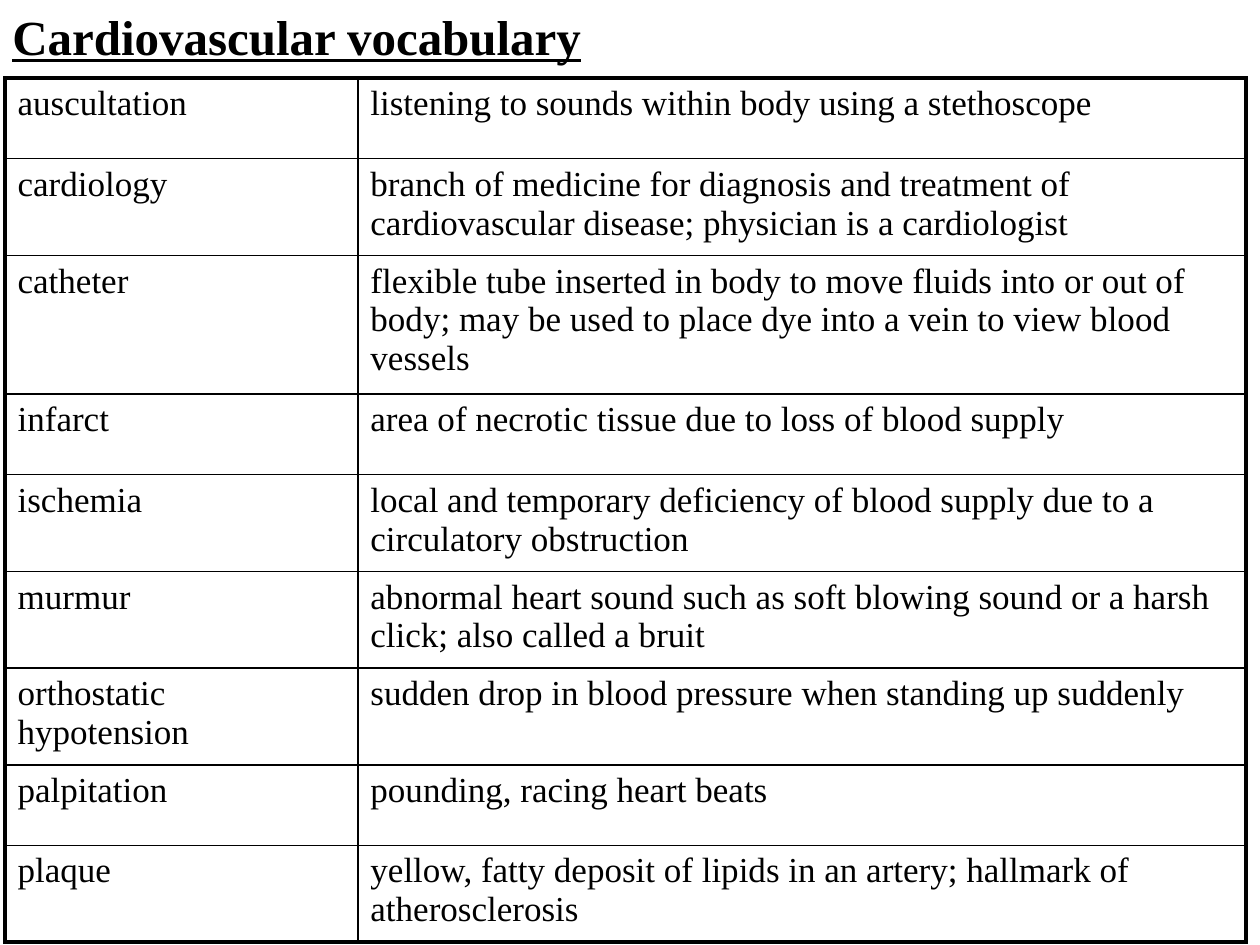
from lxml.etree import SubElement
from pptx import Presentation
from pptx.dml.color import RGBColor
from pptx.oxml.ns import qn
from pptx.util import Inches, Pt

TITLE = "Cardiovascular vocabulary"
TERMS = [
    ("auscultation", "listening to sounds within body using a stethoscope"),
    ("cardiology", "branch of medicine for diagnosis and treatment of "
     "cardiovascular disease; physician is a cardiologist"),
    ("catheter", "flexible tube inserted in body to move fluids into or out of "
     "body; may be used to place dye into a vein to view blood vessels"),
    ("infarct", "area of necrotic tissue due to loss of blood supply"),
    ("ischemia", "local and temporary deficiency of blood supply due to a "
     "circulatory obstruction"),
    ("murmur", "abnormal heart sound such as soft blowing sound or a harsh "
     "click; also called a bruit"),
    ("orthostatic hypotension",
     "sudden drop in blood pressure when standing up suddenly"),
    ("palpitation", "pounding, racing heart beats"),
    ("plaque", "yellow, fatty deposit of lipids in an artery; hallmark of "
     "atherosclerosis"),
]
INK = "000000"
FACE = "Times New Roman"
HEAD = {"name": FACE, "size": Pt(28), "bold": True, "underline": True}
BODY = {"name": FACE, "size": Pt(20), "bold": False}
WIDE, HIGH = 10, 7.5
LEFT, TOP = 0.04, 0.62
COLS = [2.8, 7.05]
ROW = 0.64
THICK, THIN = 2.25, 1


def color(code):
    return RGBColor.from_string(code)


def write(frame, text, look):
    para = frame.paragraphs[0]
    run = para.add_run()
    run.text = text
    for key, value in look.items():
        setattr(run.font, key, value)
    run.font.color.rgb = color(INK)
    return para


def border(cell, edges):
    props = cell._tc.get_or_add_tcPr()
    for side, outer in edges.items():
        width = Pt(THICK if outer else THIN)
        line = SubElement(props, qn(f"a:ln{side}"), w=str(width))
        fill = SubElement(line, qn("a:solidFill"))
        SubElement(fill, qn("a:srgbClr"), val=INK)


def main():
    deck = Presentation()
    deck.slide_width, deck.slide_height = Inches(WIDE), Inches(HIGH)
    slide = deck.slides.add_slide(deck.slide_layouts[6])

    title = slide.shapes.add_textbox(0, 0, Inches(WIDE), Inches(0.57))
    title.text_frame.word_wrap = True
    write(title.text_frame, TITLE, HEAD)

    count = len(TERMS)
    table = slide.shapes.add_table(
        count, len(COLS), Inches(LEFT), Inches(TOP),
        Inches(sum(COLS)), Inches(ROW * count)).table
    table.first_row = table.horz_banding = False
    for col, width in zip(table.columns, COLS):
        col.width = Inches(width)

    for r, term in enumerate(TERMS):
        table.rows[r].height = Inches(ROW)
        for c, text in enumerate(term):
            cell = table.cell(r, c)
            border(cell, {"L": c == 0, "R": c == len(COLS) - 1,
                          "T": r == 0, "B": r == count - 1})
            cell.fill.background()
            write(cell.text_frame, text, BODY).space_before = Pt(4)

    deck.save("out.pptx")


if __name__ == "__main__":
    main()
